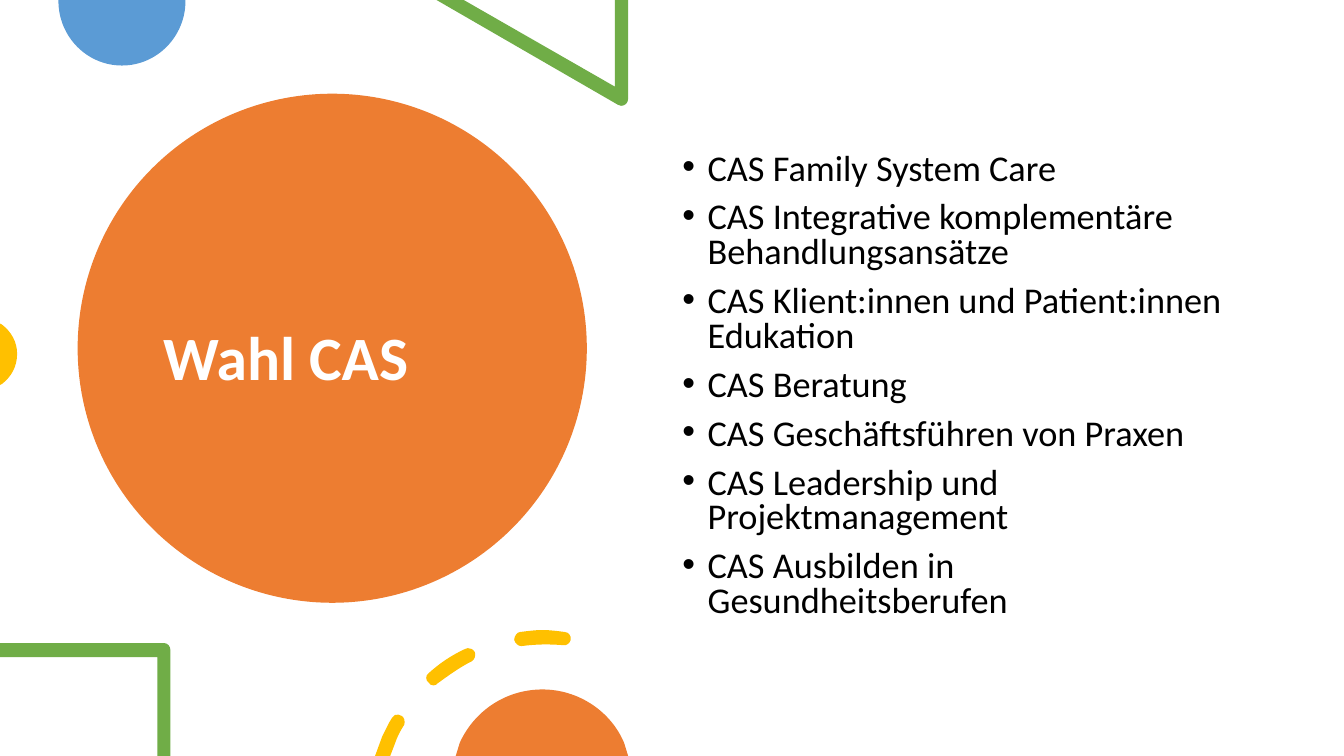
from pptx import Presentation
from pptx import util as u
from pptx.dml.color import RGBColor
from pptx.enum import shapes, text
from pptx.oxml import ns
from lxml import etree

PX = 9144  # EMU per px, 100 px to the inch
ORANGE, BLUE, GREEN, YELLOW = "ED7D31", "5B9BD5", "70AD47", "FFC000"
COURSES = [
    "CAS Family System Care",
    "CAS Integrative komplementäre Behandlungsansätze",
    "CAS Klient:innen und Patient:innen Edukation",
    "CAS Beratung",
    "CAS Geschäftsführen von Praxen",
    "CAS Leadership und Projektmanagement",
    "CAS Ausbilden in Gesundheitsberufen",
]

# Outlines relative to their box: 2 numbers are a line, 6 a Bézier curve.
CUT_DISC = [(126, 0), (0, 0), (0, 1), (0, 36, 28, 65, 63, 65), (98, 65, 126, 36, 126, 1)]
TRIANGLE = [(190, 0), (177, 0), (177, 86), (27, 0), (0, 0), (180, 104),
            (181, 105, 182, 105, 183, 105), (187, 105, 190, 102, 190, 98)]
EDGE_DISC = [(0, 0), (0, 61), (2, 60), (11, 53, 17, 43, 17, 30), (17, 18, 11, 8, 2, 1)]
FRAME = [(163, 0), (0, 0), (0, 14), (156, 14), (156, 112), (169, 112), (169, 7),
         (169, 3, 166, 0, 163, 0)]
DASHES = [
    [(23, 84), (21, 83, 18, 85, 17, 87), (13, 93, 10, 100, 7, 106), (0, 125), (15, 125),
     (20, 112), (22, 106, 25, 100, 29, 94), (30, 91, 29, 86, 26, 85), (25, 84, 24, 84, 23, 84)],
    [(92, 18), (91, 18, 90, 18, 89, 19), (76, 25, 64, 33, 53, 43), (50, 45, 50, 50, 53, 52),
     (54, 54, 56, 55, 58, 55), (60, 55, 61, 54, 62, 53), (73, 45, 84, 37, 96, 31),
     (99, 29, 100, 25, 99, 22), (97, 19, 95, 18, 92, 18)],
    [(166, 0), (159, 0, 152, 1, 144, 2), (141, 2, 138, 6, 138, 10), (139, 13, 142, 16, 145, 16),
     (160, 14, 173, 14, 186, 15), (190, 16, 193, 13, 194, 10), (195, 6, 192, 2, 188, 2),
     (181, 1, 173, 0, 166, 0)],
]
DOME = [(86, 0), (49, 0, 18, 22, 4, 53), (0, 66), (171, 66), (167, 53), (154, 22, 122, 0, 86, 0)]


def color(value):
    return RGBColor.from_string(value)


def paint(sp, fill):
    sp.shadow.inherit = False
    sp.fill.solid()
    sp.fill.fore_color.rgb = color(fill)
    sp.line.fill.background()


def bend(sp, segments):
    """Turn the line segments that stand for curves into cubic Béziers."""
    lines = list(sp._element.iter(ns.qn("a:lnTo")))
    for line, seg in zip(lines, segments):
        if len(seg) == 6:
            curve = etree.Element(ns.qn("a:cubicBezTo"))
            for x, y in zip(seg[::2], seg[1::2]):
                etree.SubElement(curve, ns.qn("a:pt"), x=str(x), y=str(y))
            line.getparent().replace(line, curve)


def draw_outline(s, left, top, fill, *outlines):
    contours = [[(left + seg[-2], top + seg[-1]) for seg in o] for o in outlines]
    builder = s.shapes.build_freeform(*contours[0][0], scale=PX)
    for i, points in enumerate(contours):
        if i:
            builder.move_to(*points[0])
        builder.add_line_segments(points[1:], close=True)
    sp = builder.convert_to_shape()
    bend(sp, [seg for o in outlines for seg in o[1:]])
    paint(sp, fill)


def add_text(s, box, lines, size, fill, bold=False, anchor=text.MSO_ANCHOR.TOP,
             spacing=1.0, before=0, inset_top=5, bullet=None):
    tf = s.shapes.add_textbox(*(v * PX for v in box)).text_frame
    tf.word_wrap = True
    tf.vertical_anchor = anchor
    tf.margin_top = inset_top * PX
    for i, line in enumerate(lines):
        p = tf.add_paragraph() if i else tf.paragraphs[0]
        p.line_spacing = spacing
        p.space_before = u.Pt(before if i else 0)
        r = p.add_run()
        r.text = line
        r.font.name = "Calibri"
        r.font.size = u.Pt(size)
        r.font.bold = bold
        r.font.color.rgb = color(fill)
        if bullet:
            pPr = p._p.get_or_add_pPr()
            pPr.set("marL", str(25 * PX))
            pPr.set("indent", str(-25 * PX))
            etree.SubElement(pPr, ns.qn("a:buFont"), typeface="Arial")
            etree.SubElement(pPr, ns.qn("a:buChar"), char=bullet)


def title_disc(s, left, top, size):
    disc = s.shapes.add_shape(shapes.MSO_SHAPE.OVAL, *(v * PX for v in (left, top, size, size)))
    paint(disc, ORANGE)
    add_text(s, (left + 75, top + 42, 354, 445), ["Wahl CAS"], 44, "FFFFFF", bold=True,
             anchor=text.MSO_ANCHOR.MIDDLE, spacing=0.9)


def decoration(s, left, top, height):
    """Place the cut-off figures along the edges of the left half."""
    bottom = top + height
    draw_outline(s, left + 58, top, BLUE, CUT_DISC)
    draw_outline(s, left + 433, top, GREEN, TRIANGLE)
    draw_outline(s, left, top + 321, YELLOW, EDGE_DISC)
    draw_outline(s, left, bottom - 112, GREEN, FRAME)
    draw_outline(s, left + 372, bottom - 125, YELLOW, *DASHES)
    draw_outline(s, left + 452, bottom - 66, ORANGE, DOME)


def course_list(s, box):
    add_text(s, box, COURSES, 25.9, "000000", spacing=0.8, before=10, inset_top=62, bullet="•")


def main():
    prs = Presentation()
    prs.slide_width, prs.slide_height = 1333 * PX, 750 * PX
    s = prs.slides.add_slide(prs.slide_layouts[6])
    title_disc(s, 77, 93, 505)
    decoration(s, 0, 0, 750)
    course_list(s, (667, 90, 575, 535))
    prs.save("out.pptx")


if __name__ == "__main__":
    main()
